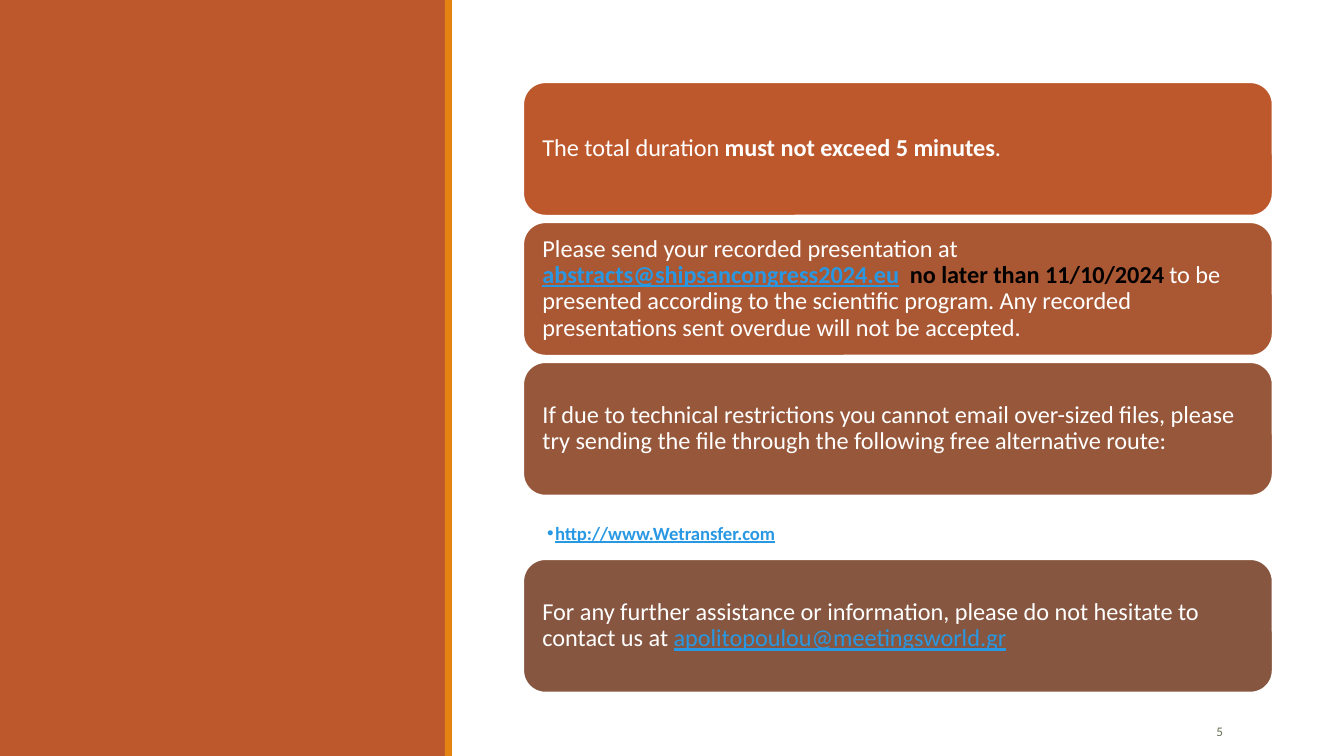
"""Build the slide with the rules for sending a recorded presentation."""
from dataclasses import dataclass

from lxml import etree
from pptx import Presentation
from pptx import util as u
from pptx.dml.color import RGBColor
from pptx.enum import shapes, text
from pptx.oxml.ns import qn

SCALE = 914400 / 134.4
FONT = "Calibri"
COLORS = {
    "white": "FFFFFF", "black": "000000", "rust": "BD582C", "orange": "E48312",
    "clay": "AA5834", "brown": "97573A", "umber": "865640",
    "link": "2998E3", "number": "637052",
}
CARD_LEFT, CARD_WIDTH, CARD_HEIGHT = 523, 750, 134
CARD_TOP, CARD_PITCH, LAST_CARD_TOP = 82, 140, 559
PAD = 13


@dataclass
class Span:
    text: str
    color: str = "white"
    bold: bool = False
    underline: bool = False


@dataclass
class Card:
    top: int
    fill: str
    spans: list[Span]


CARDS = [
    Card(CARD_TOP, "rust", [
        Span("The total duration "),
        Span("must not exceed 5 minutes", bold=True),
        Span("."),
    ]),
    Card(CARD_TOP + CARD_PITCH, "clay", [
        Span("Please send your recorded presentation at "),
        Span("abstracts@shipsancongress2024.eu", "link", True, True),
        Span("  no later than 11/10/2024 ", "black", True),
        Span("to be presented according to the scientific program. "
             "Any recorded presentations sent overdue will not be accepted."),
    ]),
    Card(CARD_TOP + 2 * CARD_PITCH, "brown", [
        Span("If due to technical restrictions you cannot email over-sized files, "
             "please try sending the file through the following free alternative route:"),
    ]),
    Card(LAST_CARD_TOP, "umber", [
        Span("For any further assistance or information, please do not hesitate "
             "to contact us at "),
        Span("apolitopoulou@meetingsworld.gr", "link", underline=True),
    ]),
]


def px(n: int) -> u.Emu:
    return u.Emu(round(n * SCALE))


def rgb(name: str) -> RGBColor:
    return RGBColor.from_string(COLORS[name])


def add_block(s, kind, left: int, top: int, width: int, height: int, fill: str):
    sp = s.shapes.add_shape(kind, px(left), px(top), px(width), px(height))
    sp.shadow.inherit = False
    sp.fill.solid()
    sp.fill.fore_color.rgb = rgb(fill)
    sp.line.fill.background()
    return sp


def set_frame(tf, anchor, side: int, edge: int) -> None:
    tf.word_wrap = True
    tf.auto_size = text.MSO_AUTO_SIZE.NONE
    tf.vertical_anchor = anchor
    tf.margin_left = tf.margin_right = px(side)
    tf.margin_top = tf.margin_bottom = px(edge)


def write(p, spans: list[Span], size: int, align=text.PP_ALIGN.LEFT) -> None:
    p.alignment = align
    p.line_spacing = 0.9
    p.space_before = u.Pt(0)
    for span in spans:
        r = p.add_run()
        r.text = span.text
        r.font.name = FONT
        r.font.size = u.Pt(size)
        r.font.bold = span.bold
        r.font.underline = span.underline
        r.font.color.rgb = rgb(span.color)


def add_card(s, card: Card) -> None:
    sp = add_block(s, shapes.MSO_SHAPE.ROUNDED_RECTANGLE, CARD_LEFT, card.top,
                   CARD_WIDTH, CARD_HEIGHT, card.fill)
    sp.line.color.rgb = rgb("white")
    sp.line.width = u.Pt(1.25)
    set_frame(sp.text_frame, text.MSO_ANCHOR.MIDDLE, PAD, PAD)
    write(sp.text_frame.paragraphs[0], card.spans, 13)


def fill_link_list(sp, span: Span) -> None:
    sp.left, sp.top = px(CARD_LEFT), px(524)
    sp.width, sp.height = px(CARD_WIDTH), px(26)
    set_frame(sp.text_frame, text.MSO_ANCHOR.TOP, 24, 0)
    p = sp.text_frame.paragraphs[0]
    pPr = p._p.get_or_add_pPr()
    pPr.set("marL", str(px(8)))
    pPr.set("indent", str(px(-8)))
    etree.SubElement(pPr, qn("a:buChar")).set("char", "•")
    write(p, [span], 10)


def add_number(s, number: str) -> None:
    sp = s.shapes.add_textbox(px(1116), px(712), px(120), px(40))
    set_frame(sp.text_frame, text.MSO_ANCHOR.MIDDLE, PAD, 6)
    write(sp.text_frame.paragraphs[0], [Span(number, "number")], 7,
          text.PP_ALIGN.RIGHT)


def main() -> None:
    prs = Presentation()
    prs.slide_width, prs.slide_height = px(1344), px(756)
    s = prs.slides.add_slide(prs.slide_layouts[1])
    title = s.shapes.title._element
    title.getparent().remove(title)
    add_block(s, shapes.MSO_SHAPE.RECTANGLE, 0, 0, 446, 756, "rust")
    add_block(s, shapes.MSO_SHAPE.RECTANGLE, 445, 0, 7, 756, "orange")
    add_number(s, "5")
    for card in CARDS:
        add_card(s, card)
    fill_link_list(s.placeholders[1],
                   Span("http://www.Wetransfer.com", "link", True, True))
    prs.save("out.pptx")


if __name__ == "__main__":
    main()
